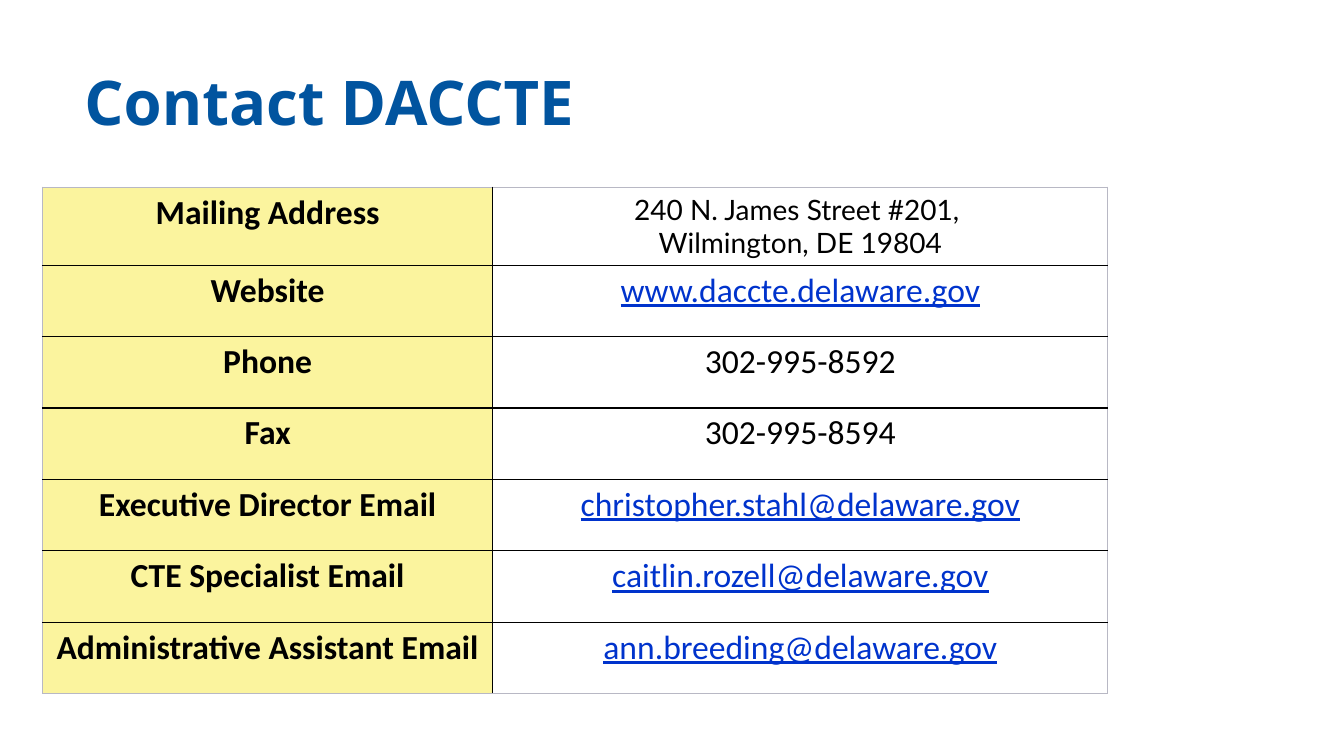
"""Build the DACCTE contact slide."""
from dataclasses import dataclass

import lxml.etree
import pptx
import pptx.dml.color
import pptx.enum.text
import pptx.oxml.ns
import pptx.slide
import pptx.table
import pptx.text.text
import pptx.util
from pptx.util import Cm

BLUE = pptx.dml.color.RGBColor(0x01, 0x54, 0x9F)
BLACK = pptx.dml.color.RGBColor(0x00, 0x00, 0x00)
LINK = pptx.dml.color.RGBColor(0x00, 0x33, 0xCC)
YELLOW = pptx.dml.color.RGBColor(0xFB, 0xF4, 0x9E)
GREY = pptx.dml.color.RGBColor(0xB8, 0xB8, 0xC4)


@dataclass(frozen=True)
class TextStyle:
    font: str
    size: int
    color: pptx.dml.color.RGBColor
    bold: bool = False
    underline: bool = False


TITLE = TextStyle("Noto Sans", 44, BLUE, bold=True)
LABEL = TextStyle("Calibri", 24, BLACK, bold=True)
ADDRESS = TextStyle("Lato", 20, BLACK)
NUMBER = TextStyle("Calibri", 24, BLACK)
ONLINE = TextStyle("Calibri", 24, LINK, underline=True)


@dataclass(frozen=True)
class Contact:
    label: str
    value: str
    style: TextStyle


CONTACTS = [
    Contact("Mailing Address", "240 N. James Street #201, \nWilmington, DE 19804", ADDRESS),
    Contact("Website", "www.daccte.delaware.gov", ONLINE),
    Contact("Phone", "302-995-8592", NUMBER),
    Contact("Fax", "302-995-8594", NUMBER),
    Contact("Executive Director Email", "christopher.stahl@delaware.gov", ONLINE),
    Contact("CTE Specialist Email", "caitlin.rozell@delaware.gov", ONLINE),
    Contact("Administrative Assistant Email", "ann.breeding@delaware.gov", ONLINE),
]
COLUMN_WIDTHS = [Cm(11.35), Cm(15.5)]
FIRST_ROW_HEIGHT = Cm(1.96)
ROW_HEIGHT = Cm(1.8)


def write(frame: pptx.text.text.TextFrame, text: str, style: TextStyle,
          alignment: pptx.enum.text.PP_ALIGN) -> None:
    frame.text = text
    for para in frame.paragraphs:
        para.alignment = alignment
        for span in para.runs:
            span.font.name = style.font
            span.font.size = pptx.util.Pt(style.size)
            span.font.bold = style.bold
            span.font.underline = style.underline
            span.font.color.rgb = style.color


def add_border(cell: pptx.table._Cell, side: str, color: pptx.dml.color.RGBColor) -> None:
    properties = cell._tc.get_or_add_tcPr()
    qualify = pptx.oxml.ns.qn
    line = lxml.etree.SubElement(properties, qualify(f"a:{side}"), w=str(pptx.util.Pt(1)))
    fill = lxml.etree.SubElement(line, qualify("a:solidFill"))
    lxml.etree.SubElement(fill, qualify("a:srgbClr"), val=str(color))


def add_title(page: pptx.slide.Slide) -> None:
    box = page.shapes.add_textbox(Cm(1.88), Cm(1.7), Cm(25.7), Cm(3.66))
    box.text_frame.word_wrap = True
    write(box.text_frame, "Contact DACCTE", TITLE, pptx.enum.text.PP_ALIGN.LEFT)
    box.text_frame.paragraphs[0].line_spacing = 0.9


def add_contacts(page: pptx.slide.Slide) -> None:
    height = FIRST_ROW_HEIGHT + ROW_HEIGHT * (len(CONTACTS) - 1)
    table = page.shapes.add_table(len(CONTACTS), len(COLUMN_WIDTHS), Cm(1.07), Cm(4.72),
                                  sum(COLUMN_WIDTHS), height).table
    table.first_row = False
    table.horz_banding = False
    for column, width in zip(table.columns, COLUMN_WIDTHS):
        column.width = width
    last = len(CONTACTS) - 1
    for index, contact in enumerate(CONTACTS):
        table.rows[index].height = ROW_HEIGHT if index else FIRST_ROW_HEIGHT
        label, value = table.cell(index, 0), table.cell(index, 1)
        for cell, text, style in ((label, contact.label, LABEL),
                                  (value, contact.value, contact.style)):
            write(cell.text_frame, text, style, pptx.enum.text.PP_ALIGN.CENTER)
            add_border(cell, "lnL", GREY if cell is label else BLACK)
            add_border(cell, "lnR", BLACK if cell is label else GREY)
            add_border(cell, "lnT", BLACK if index else GREY)
            add_border(cell, "lnB", BLACK if index < last else GREY)
        label.fill.solid()
        label.fill.fore_color.rgb = YELLOW
        value.fill.background()


def main() -> None:
    deck = pptx.Presentation()
    deck.slide_width, deck.slide_height = Cm(33.87), Cm(19.05)
    page = deck.slides.add_slide(deck.slide_layouts[6])
    add_title(page)
    add_contacts(page)
    deck.save("out.pptx")


if __name__ == "__main__":
    main()
